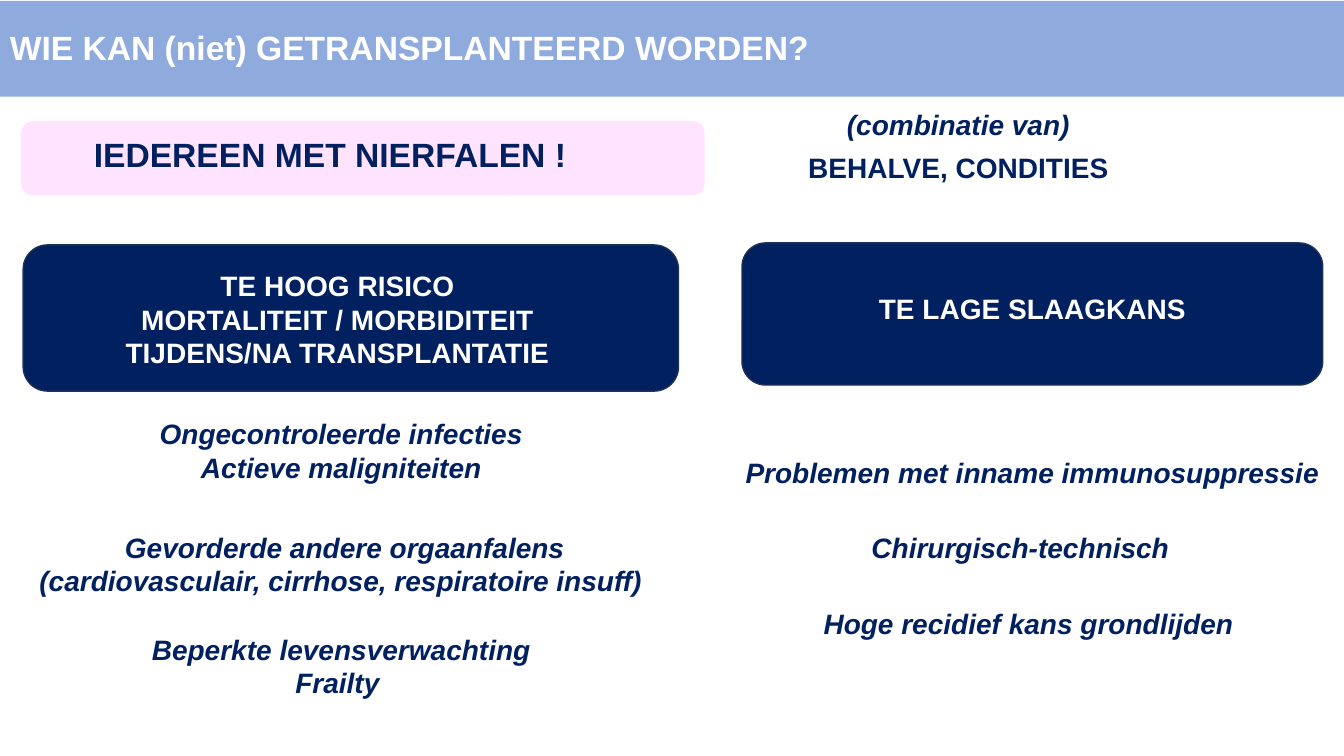
from dataclasses import dataclass

from pptx import Presentation
from pptx.dml.color import RGBColor
from pptx.enum.shapes import MSO_SHAPE as Shape
from pptx.enum.text import MSO_ANCHOR as Anchor, MSO_AUTO_SIZE as AutoSize, PP_ALIGN as Align
from pptx.util import Pt

EMU_PER_PX = 9144  # 100 px to the inch


@dataclass(frozen=True)
class Theme:
    font: str = "Arial"
    navy: str = "002060"
    navy_edge: str = "1E3256"
    header_blue: str = "8FAADC"
    pink: str = "FFE3FF"
    white: str = "FFFFFF"
    heading_size: int = 24
    body_size: int = 20


def px(*lengths):
    return [length * EMU_PER_PX for length in lengths]


class SlideBuilder:
    def __init__(self, slide, theme):
        self.slide = slide
        self.theme = theme

    def panel(self, box, fill, kind=Shape.RECTANGLE, line=None):
        shape = self.slide.shapes.add_shape(kind, *px(*box))
        shape.shadow.inherit = False
        shape.fill.solid()
        shape.fill.fore_color.rgb = RGBColor.from_string(fill)
        if line:
            shape.line.color.rgb = RGBColor.from_string(line)
            shape.line.width = Pt(1)
        else:
            shape.line.fill.background()
        return shape

    def text(self, box, *lines, fill=None, color=None, size=None, italic=False,
             align=Align.CENTER):
        """Bold text, one paragraph per line, on a filled or a clear box."""
        if fill:
            shape = self.panel(box, fill)
        else:
            shape = self.slide.shapes.add_textbox(*px(*box))
        frame = shape.text_frame
        frame.word_wrap = True
        frame.auto_size = AutoSize.SHAPE_TO_FIT_TEXT
        frame.vertical_anchor = Anchor.MIDDLE
        for index, line in enumerate(lines):
            paragraph = frame.add_paragraph() if index else frame.paragraphs[0]
            paragraph.alignment = align
            run = paragraph.add_run()
            run.text = line
            font = run.font
            font.name = self.theme.font
            font.size = Pt(size or self.theme.body_size)
            font.bold = True
            font.italic = italic
            font.color.rgb = RGBColor.from_string(color or self.theme.navy)


def main():
    theme = Theme()
    presentation = Presentation()
    presentation.slide_width, presentation.slide_height = px(1333, 750)
    slide = presentation.slides.add_slide(presentation.slide_layouts[6])
    builder = SlideBuilder(slide, theme)

    # Header
    builder.panel((0, 1, 1333, 95), theme.header_blue)
    builder.text((0, 22, 1333, 50), "WIE KAN (niet) GETRANSPLANTEERD WORDEN?",
                 fill=theme.header_blue, color=theme.white,
                 size=theme.heading_size, align=Align.LEFT)

    # Everyone, except
    builder.panel((21, 120, 678, 74), theme.pink, Shape.ROUNDED_RECTANGLE)
    builder.text((-7, 128, 678, 50), "IEDEREEN MET NIERFALEN ! ", size=theme.heading_size)
    builder.text((720, 144, 461, 44), "BEHALVE, CONDITIES", fill=theme.white)
    builder.text((720, 101, 461, 44), "(combinatie van)", fill=theme.white, italic=True)

    # Column headings
    for box in ((23, 243, 650, 145), (736, 241, 576, 141)):
        builder.panel(box, theme.navy, Shape.ROUNDED_RECTANGLE, theme.navy_edge)
    builder.text((21, 261, 635, 111), "TE HOOG RISICO ", "MORTALITEIT / MORBIDITEIT ",
                 "TIJDENS/NA TRANSPLANTATIE ", color=theme.white)
    builder.text((736, 284, 576, 44), "TE LAGE SLAAGKANS", color=theme.white)

    # Conditions under each heading
    conditions = [
        ((21, 408, 635, 77), "Ongecontroleerde infecties", "Actieve maligniteiten"),
        ((17, 521, 650, 77),
         "Gevorderde andere orgaanfalens (cardiovasculair, cirrhose, respiratoire insuff) "),
        ((21, 622, 635, 77), "Beperkte levensverwachting", "Frailty "),
        ((720, 447, 608, 44), "Problemen met inname immunosuppressie"),
        ((708, 521, 608, 44), "Chirurgisch-technisch"),
        ((720, 596, 608, 44), "Hoge recidief kans grondlijden "),
    ]
    for box, *lines in conditions:
        builder.text(box, *lines, fill=theme.white, italic=True)

    presentation.save("out.pptx")


if __name__ == "__main__":
    main()
